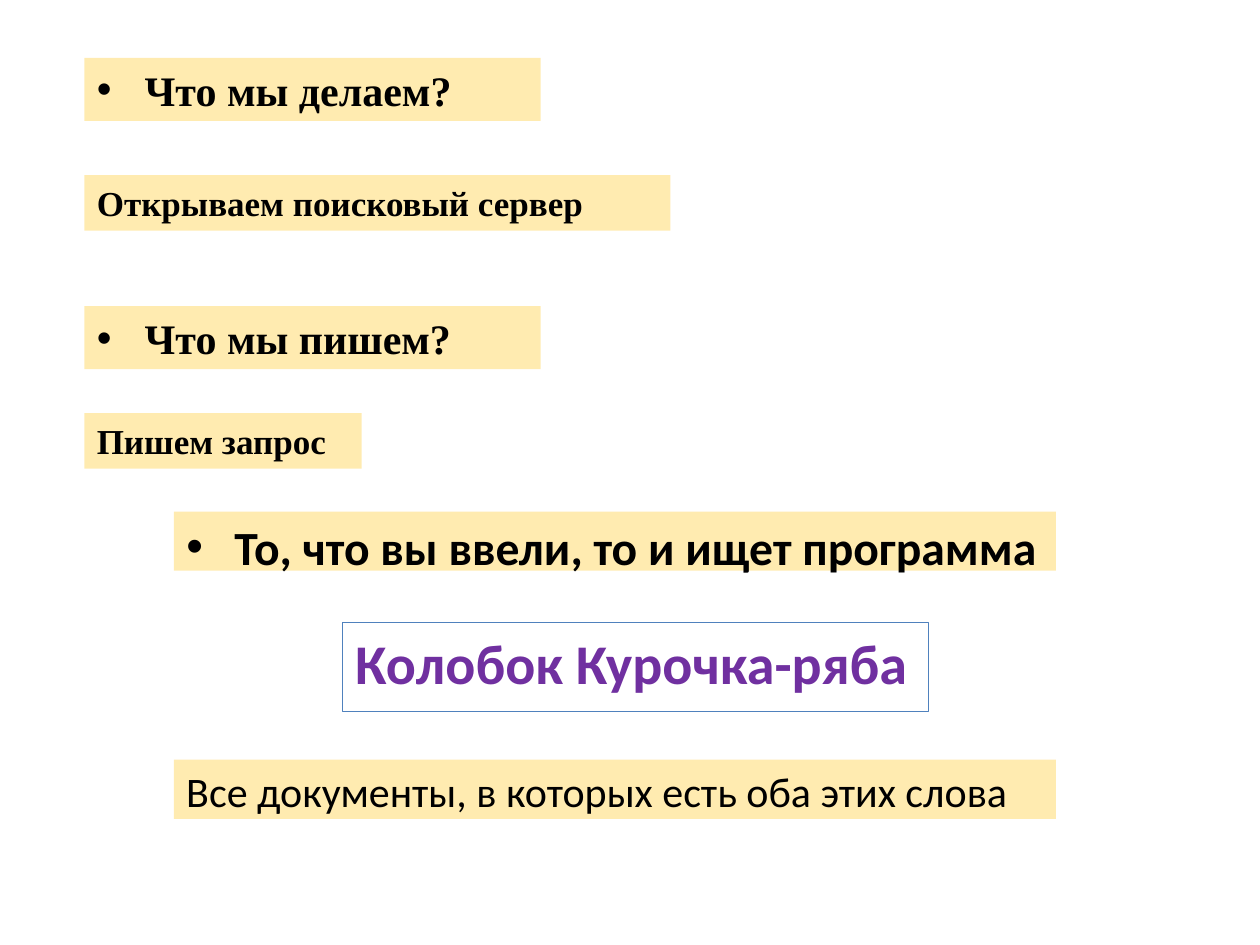
from dataclasses import dataclass

from lxml import etree
from pptx import Presentation
from pptx.dml.color import RGBColor
from pptx.enum.text import MSO_ANCHOR, MSO_AUTO_SIZE
from pptx.oxml.ns import qn
from pptx.util import Inches, Pt

TOP = MSO_ANCHOR.TOP
NO_FIT = MSO_AUTO_SIZE.NONE
GROW = MSO_AUTO_SIZE.SHAPE_TO_FIT_TEXT
SERIF, SANS = "Times New Roman", "Calibri"
AMBER, BLUE, PURPLE, BLACK = "FFC000", "4F81BD", "7030A0", "000000"
AMBER_ALPHA = 31
INDENT = 0.38
LEFT, INNER_LEFT = 0.67, 1.38


@dataclass
class Label:
    text: str
    left: float
    top: float
    width: float
    height: float
    size: float
    font: str = SERIF
    bold: bool = True
    color: str = BLACK
    bullet: bool = False
    framed: bool = False


def rgb(color: str) -> RGBColor:
    return RGBColor.from_string(color)


def style_box(shape, label: Label) -> None:
    """Give the box a thin frame or a translucent amber fill."""
    if label.framed:
        shape.fill.background()
        shape.line.color.rgb = rgb(BLUE)
        shape.line.width = Pt(0.75)
        return
    shape.fill.solid()
    shape.fill.fore_color.rgb = rgb(AMBER)
    color_element = shape.fill._xPr.find(qn("a:solidFill"))[0]
    etree.SubElement(color_element, qn("a:alpha"), val=str(AMBER_ALPHA * 1000))


def set_bullet(paragraph) -> None:
    properties = paragraph._p.get_or_add_pPr()
    properties.set("marL", str(Inches(INDENT)))
    properties.set("indent", str(-Inches(INDENT)))
    etree.SubElement(properties, qn("a:buFont"), typeface="Arial")
    etree.SubElement(properties, qn("a:buChar"), char="•")


def write_label(shape, label: Label) -> None:
    shape.left, shape.top = Inches(label.left), Inches(label.top)
    shape.width, shape.height = Inches(label.width), Inches(label.height)
    style_box(shape, label)

    frame = shape.text_frame
    frame.word_wrap = True
    frame.vertical_anchor = TOP
    frame.auto_size = GROW if label.font == SERIF else NO_FIT

    paragraph = frame.paragraphs[0]
    # Sans labels have a fifth of the text size as space above
    paragraph.space_before = Pt(round(label.size / 5, 1) if label.font == SANS else 0)
    if label.bullet:
        set_bullet(paragraph)
    run = paragraph.add_run()
    run.text = label.text
    run.font.name = label.font
    run.font.size = Pt(label.size)
    run.font.bold = label.bold
    run.font.color.rgb = rgb(label.color)


RULE = Label("То, что вы ввели, то и ищет программа", INNER_LEFT, 4.06, 7, 0.47,
             27.2, SANS, bullet=True)
LABELS = [
    Label("Что мы делаем?", LEFT, 0.46, 3.62, 0.5, 24, bullet=True),
    Label("Открываем поисковый сервер", LEFT, 1.39, 4.65, 0.44, 20),
    Label("Пишем запрос", LEFT, 3.28, 2.2, 0.44, 20),
    Label("Что мы пишем?", LEFT, 2.43, 3.62, 0.5, 24, bullet=True),
    Label("Колобок Курочка-ряба", 2.72, 4.94, 4.65, 0.71, 32, SANS,
          color=PURPLE, framed=True),
    Label("Все документы, в которых есть оба этих слова", INNER_LEFT, 6.03, 7, 0.47,
          24, SANS, bold=False),
]


def main() -> None:
    presentation = Presentation()
    presentation.slide_width, presentation.slide_height = Inches(10), Inches(7.5)
    slide = presentation.slides.add_slide(presentation.slide_layouts[1])

    # The slide has no title
    title = slide.shapes.title._element
    title.getparent().remove(title)

    # Body placeholder holds the search rule
    write_label(slide.placeholders[1], RULE)

    # Questions, answers and the sample query
    for label in LABELS:
        write_label(slide.shapes.add_textbox(0, 0, 0, 0), label)

    presentation.save("out.pptx")


if __name__ == "__main__":
    main()
